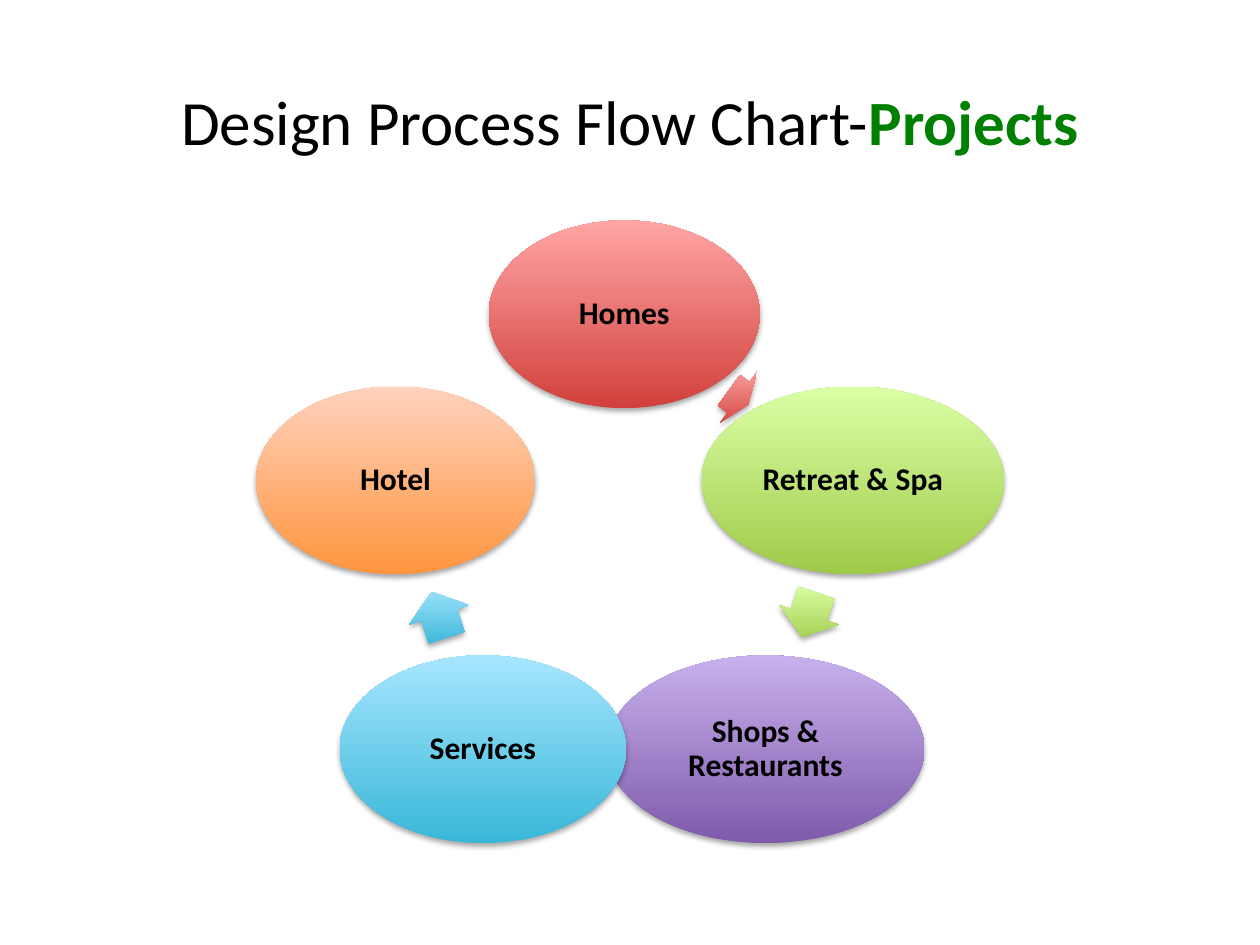
"""Build the project cycle slide: five ovals on a ring joined by block arrows."""
from math import cos, radians, sin

from lxml.etree import SubElement
from pptx import Presentation
from pptx.dml.color import RGBColor
from pptx.enum.shapes import MSO_SHAPE as Preset
from pptx.enum.text import MSO_ANCHOR as Anchor, PP_ALIGN as Align
from pptx.oxml.ns import qn
from pptx.util import Pt

COLOURS = {
    "text": "000000",
    "accent": "008000",
    "red": ("D1403C", "FFA6A5"),
    "green": ("A0CA4A", "DAFFA5"),
    "purple": ("7F5BAB", "C8B0ED"),
    "blue": ("39B7D8", "A7E6FF"),
    "orange": ("FF953E", "FFD2BD"),
}
STAGES = [
    ("Homes", "red", 154.8, 13.7),
    ("Retreat & Spa", "green", 172.8, 26.6),
    ("Shops & Restaurants", "purple", 181.4, None),
    ("Services", "blue", 163.6, 27.4),
    ("Hotel", "orange", 159.2, None),
]
CENTRE_X, CENTRE_Y, RADIUS = 356.7, 317, 137.4
OVAL_HEIGHT, ARROW_HEIGHT = 107.3, 36
STEP = 360 / len(STAGES)


class Deck:
    """Hold the slide and the shared style of its elements."""

    font = "Calibri"

    def __init__(self, slide):
        self.slide = slide

    def style(self, run, size, colour, bold=False):
        """Format one run of text."""
        run.font.name = self.font
        run.font.size = Pt(size)
        run.font.bold = bold
        run.font.color.rgb = RGBColor.from_string(COLOURS[colour])

    def title(self, plain, accent):
        """Add the heading with its highlighted last word."""
        heading = self.slide.shapes.add_textbox(Pt(36), Pt(24), Pt(648), Pt(90))
        frame = heading.text_frame
        frame.word_wrap = True
        frame.vertical_anchor = Anchor.MIDDLE
        line = frame.paragraphs[0]
        line.alignment = Align.CENTER
        for wording, colour, bold in ((plain, "text", False), (accent, "accent", True)):
            run = line.add_run()
            run.text = wording
            self.style(run, 36, colour, bold)

    def glossy(self, preset, x, y, width, height, colour):
        """Add a shaded shape with a soft shadow, centred on x and y."""
        shape = self.slide.shapes.add_shape(
            preset, Pt(x - width / 2), Pt(y - height / 2), Pt(width), Pt(height))
        shape.fill.gradient()
        shape.fill.gradient_angle = 90
        for stop, shade, position in zip(shape.fill.gradient_stops, COLOURS[colour], (0, 1)):
            stop.color.rgb = RGBColor.from_string(shade)
            stop.position = position
        shape.line.fill.background()
        shape.shadow.inherit = False
        properties = shape._element.spPr
        properties.find(qn("a:gradFill")).set("rotWithShape", "0")
        shadow = SubElement(
            properties.find(qn("a:effectLst")), qn("a:outerShdw"),
            blurRad=str(Pt(3.1)), dist=str(Pt(1.8)), dir="5400000", rotWithShape="0")
        tone = SubElement(shadow, qn("a:srgbClr"), val=COLOURS["text"])
        SubElement(tone, qn("a:alpha"), val="35000")
        return shape

    def oval(self, label, x, y, width, colour):
        """Add a labelled stage."""
        frame = self.glossy(Preset.OVAL, x, y, width, OVAL_HEIGHT, colour).text_frame
        frame.word_wrap = True
        frame.vertical_anchor = Anchor.MIDDLE
        frame.margin_left = frame.margin_right = Pt(2)
        frame.margin_top = frame.margin_bottom = Pt(2)
        frame.text = label
        line = frame.paragraphs[0]
        line.alignment = Align.CENTER
        line.line_spacing = 0.9
        self.style(line.runs[0], 18, "text", True)

    def arrow(self, x, y, length, angle, colour):
        """Add a block arrow turned to the given angle."""
        pointer = self.glossy(Preset.RIGHT_ARROW, x, y, length, ARROW_HEIGHT, colour)
        pointer.adjustments[0] = 0.6
        pointer.adjustments[1] = 0.5
        pointer.rotation = angle


def on_ring(turn, radius):
    """Return the point at a clockwise turn from the top of the ring."""
    return (CENTRE_X + radius * sin(radians(turn)),
            CENTRE_Y - radius * cos(radians(turn)))


def main():
    """Build and save the slide."""
    presentation = Presentation()
    presentation.slide_width, presentation.slide_height = Pt(720), Pt(540)
    deck = Deck(presentation.slides.add_slide(presentation.slide_layouts[6]))
    deck.title("Design Process Flow Chart-", "Projects")
    for index, (label, colour, width, arrow_length) in enumerate(STAGES):
        turn = index * STEP
        deck.oval(label, *on_ring(turn, RADIUS), width, colour)
        if arrow_length:
            halfway = turn + STEP / 2
            midpoint = on_ring(halfway, RADIUS * cos(radians(STEP / 2)))
            deck.arrow(*midpoint, arrow_length, halfway, colour)
    presentation.save("out.pptx")


if __name__ == "__main__":
    main()
